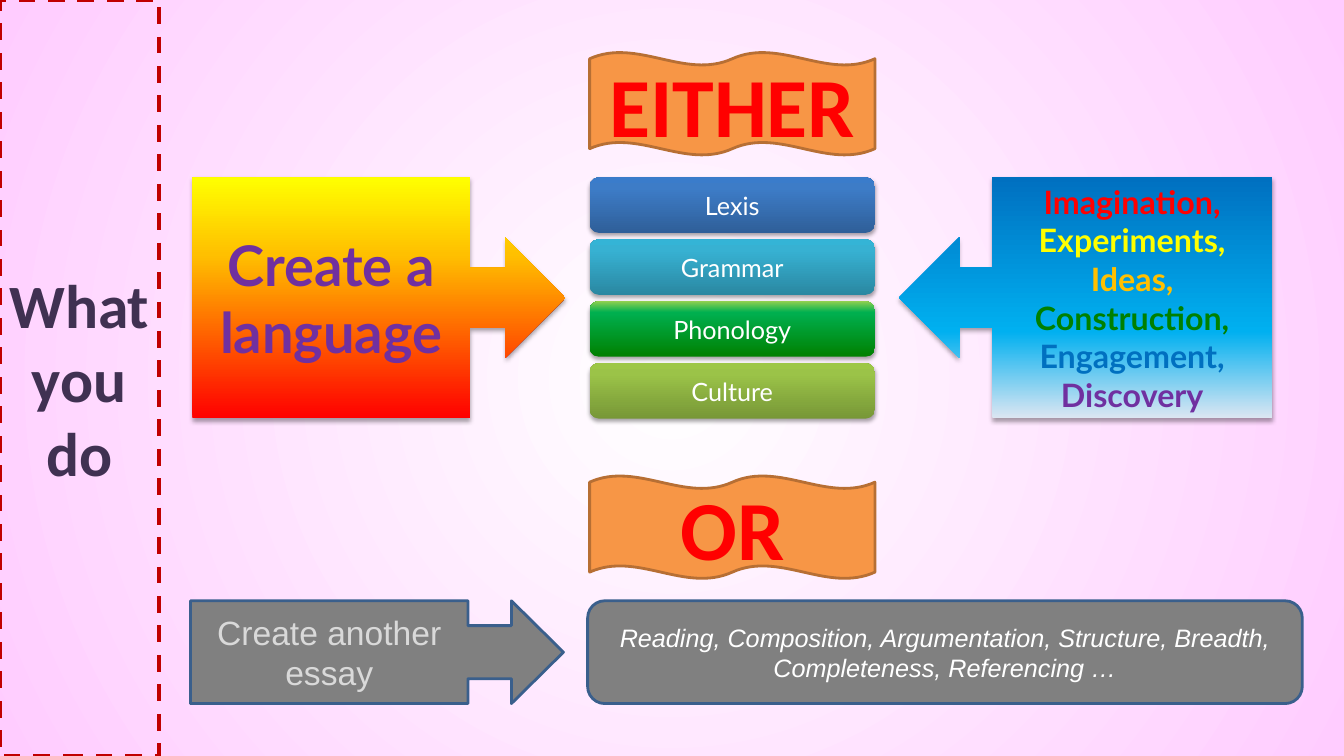
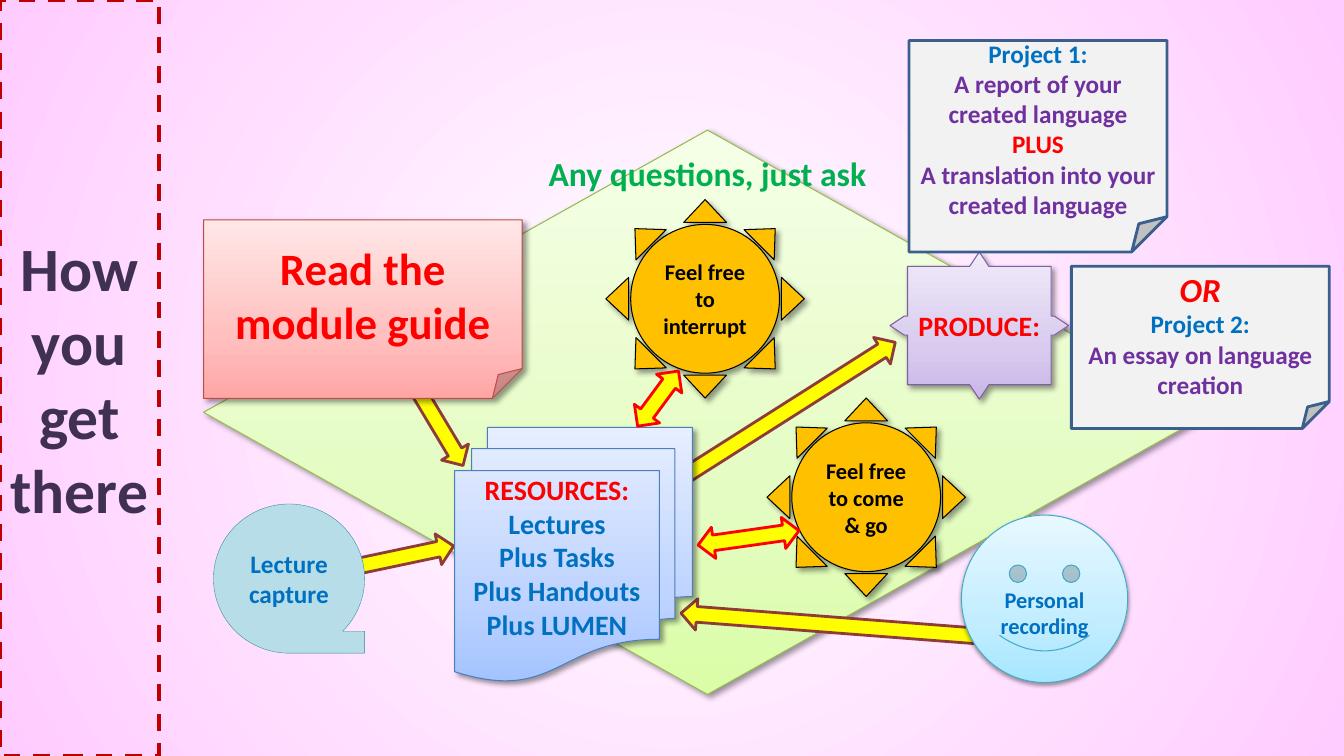
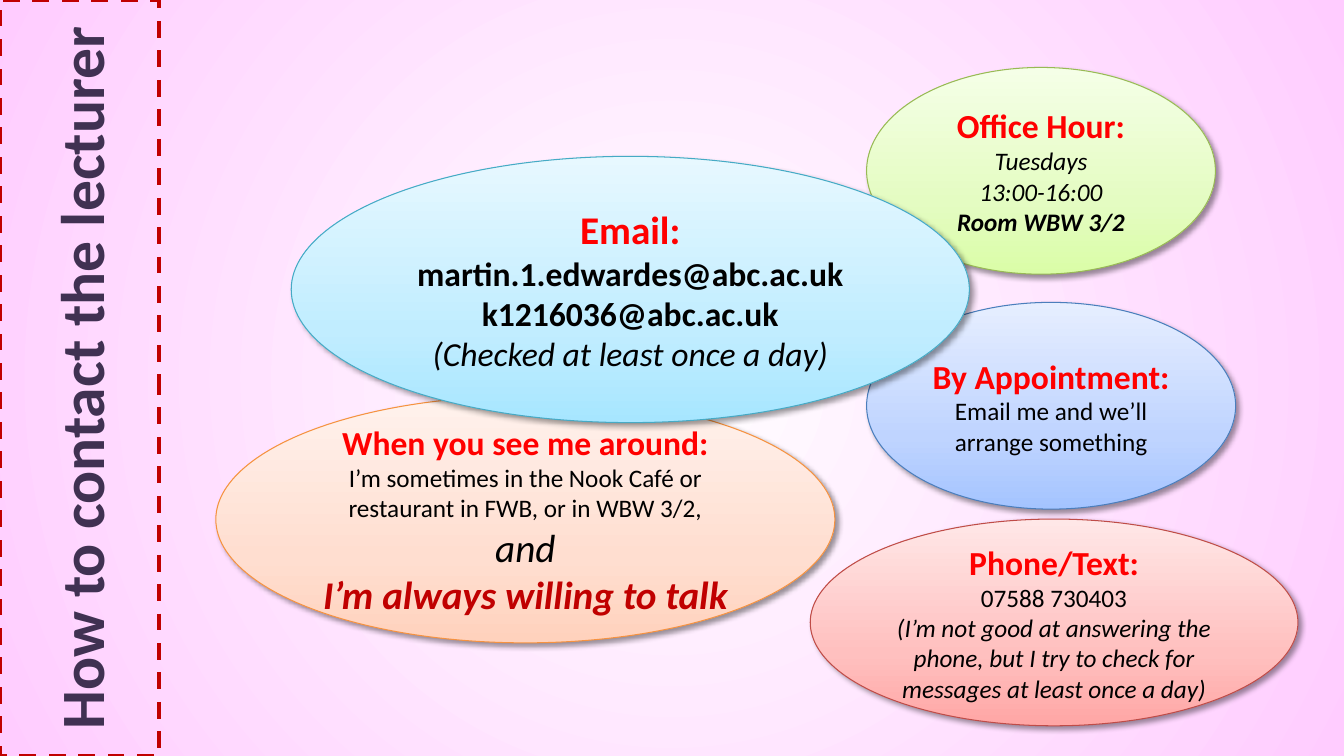
from dataclasses import dataclass

from lxml import etree
from pptx import Presentation
from pptx.dml.color import RGBColor
from pptx.enum.dml import MSO_LINE
from pptx.enum.shapes import MSO_SHAPE
from pptx.enum.text import MSO_ANCHOR, MSO_AUTO_SIZE, PP_ALIGN
from pptx.oxml.ns import qn
from pptx.util import Cm, Pt

CENTER = PP_ALIGN.CENTER
TOP, MIDDLE = MSO_ANCHOR.TOP, MSO_ANCHOR.MIDDLE
NO_FIT = MSO_AUTO_SIZE.NONE
DASH = MSO_LINE.DASH
ROUNDED = MSO_SHAPE.ROUNDED_RECTANGLE
WAVE = MSO_SHAPE.DOUBLE_WAVE
RIGHT_CALLOUT = MSO_SHAPE.RIGHT_ARROW_CALLOUT
LEFT_CALLOUT = MSO_SHAPE.LEFT_ARROW_CALLOUT
QUAD_CALLOUT = MSO_SHAPE.QUAD_ARROW_CALLOUT
DIAMOND = MSO_SHAPE.FLOWCHART_DECISION
DOCUMENTS = MSO_SHAPE.FLOWCHART_MULTIDOCUMENT
TAPE = MSO_SHAPE.FLOWCHART_SEQUENTIAL_ACCESS_STORAGE
NOTE = MSO_SHAPE.FOLDED_CORNER
SUN = MSO_SHAPE.SUN
SMILEY = MSO_SHAPE.SMILEY_FACE
OVAL = MSO_SHAPE.OVAL
ARROW = MSO_SHAPE.RIGHT_ARROW
TWO_WAY = MSO_SHAPE.LEFT_RIGHT_ARROW
TITLE_ONLY = 5


def pastel(low, middle, high, line):
    """Fill and outline of a soft box, shaded from its foot to its top."""
    return {"fill": ((0, low), (35, middle), (100, high)), "line": (line, 0.75)}


@dataclass(frozen=True)
class Theme:
    width: float = 33.87
    height: float = 19.05
    band: float = 4
    body_font: str = "Calibri"
    label_font: str = "Lato"
    essay_font: str = "Arial"
    backdrop: tuple = ((0, "FFFFFF"), (100, "FFCCFF"))
    # type sizes
    title: float = 44
    banner: float = 60
    display: float = 40
    heading: float = 32
    strong: float = 28
    lead: float = 24
    traits: float = 23
    label: float = 20
    text: float = 18
    small: float = 16
    # colours
    ink: str = "403152"
    black: str = "000000"
    white: str = "FFFFFF"
    pale: str = "D9D9D9"
    red: str = "FF0000"
    crimson: str = "C00000"
    yellow: str = "FFFF00"
    gold: str = "FFC000"
    green: str = "00B050"
    leaf: str = "008000"
    blue: str = "0070C0"
    purple: str = "7030A0"
    gray: str = "808080"
    paper: str = "F2F2F2"
    orange: str = "F79646"
    sky: str = "B7DEE8"
    navy_line: str = "3A5F8C"
    brown_line: str = "8E3B39"
    wave_line: str = "B76F34"
    sky_line: str = "31859C"


T = Theme()
GREENS = pastel("DAFDA7", "E4FCC2", "F5FFE7", "98B955")
BLUES = pastel("A4C4FF", "BFD4FF", "E6EEFF", "4B7EBC")
REDS = pastel("FFA6A5", "FFC0BF", "FFE7E7", "BF4C48")
AQUAS = pastel("A7E6FF", "C1EDFF", "E7F8FF", "46AAC5")
ORANGES = pastel("FFD2BD", "FFDED0", "FFF2ED", "F69240")
PURPLES = pastel("C9B5E8", "D8CBEE", "F0EAF9", "7D60A0")
# opacity %, blur pt, distance pt, direction in degrees
SOFT = (35, 3.1, 1.8, 90)
CAST = (40, 4, 3, 45)
UNDER = (38, 3.1, 1.6, 90)


@dataclass(frozen=True)
class Span:
    text: str
    size: float
    color: str
    bold: bool = True
    italic: bool = False


def plain(text, size=T.text, color=T.black, italic=False):
    return Span(text, size, color, False, italic)


def set_font(font, span, name):
    font.name, font.size = name, Pt(span.size)
    font.bold, font.italic = span.bold, span.italic
    font.color.rgb = RGBColor.from_string(span.color)


def gradient(stops, radial=False):
    grad = etree.Element(qn("a:gradFill"), rotWithShape="1")
    stop_list = etree.SubElement(grad, qn("a:gsLst"))
    for position, color in stops:
        stop = etree.SubElement(stop_list, qn("a:gs"), pos=str(position * 1000))
        etree.SubElement(stop, qn("a:srgbClr"), val=color)
    if radial:
        circle = etree.SubElement(grad, qn("a:path"), {"path": "circle"})
        etree.SubElement(circle, qn("a:fillToRect"),
                         {side: "50000" for side in "ltrb"})
    else:
        etree.SubElement(grad, qn("a:lin"), ang=str(270 * 60000), scaled="0")
    return grad


def swap_solid(parent, grad):
    parent.replace(parent.find(qn("a:solidFill")), grad)


class Deck:
    def __init__(self):
        self.prs = Presentation()
        self.prs.slide_width, self.prs.slide_height = Cm(T.width), Cm(T.height)
        master = self.prs.slide_master
        master.background.fill.solid()
        swap_solid(next(master.element.iter(qn("p:bgPr"))),
                   gradient(T.backdrop, radial=True))
        self.slide = None

    def new_slide(self, title, turned=False):
        """Start a slide; a turned title reads upwards along the side band."""
        self.slide = self.prs.slides.add_slide(self.prs.slide_layouts[TITLE_ONLY])
        band = self.slide.shapes.title
        width, height = (T.height, T.band) if turned else (T.band, T.height)
        band.left, band.top = Cm((T.band - width) / 2), Cm((T.height - height) / 2)
        band.width, band.height = Cm(width), Cm(height)
        band.rotation = 270 if turned else 0
        self.outline(band, T.crimson, 3)
        band.line.dash_style = DASH
        self.put_text(band, [Span(title, T.title, T.ink)])
        frame = band.text_frame
        frame.auto_size = NO_FIT
        frame.margin_left = frame.margin_right = Cm(0.1)

    def outline(self, shape, color, points):
        shape.line.color.rgb = RGBColor.from_string(color)
        shape.line.width = Pt(points)

    def put_text(self, shape, paragraphs, font=T.body_font, anchor=MIDDLE):
        """Fill a shape; a paragraph is one Span or a tuple of Spans."""
        frame = shape.text_frame
        frame.word_wrap = True
        frame.vertical_anchor = anchor
        for index, content in enumerate(paragraphs):
            paragraph = frame.add_paragraph() if index else frame.paragraphs[0]
            paragraph.alignment = CENTER
            if isinstance(content, Span):
                paragraph.add_run().text = content.text
                set_font(paragraph.font, content, font)
                continue
            for span in content:
                run = paragraph.add_run()
                run.text = span.text
                set_font(run.font, span, font)

    def shadow(self, shape, opacity, blur, distance, angle):
        effects = shape.element.spPr.find(qn("a:effectLst"))
        outer = etree.SubElement(
            effects, qn("a:outerShdw"), blurRad=str(int(Pt(blur))),
            dist=str(int(Pt(distance))), dir=str(angle * 60000), rotWithShape="0")
        color = etree.SubElement(outer, qn("a:srgbClr"), val=T.black)
        etree.SubElement(color, qn("a:alpha"), val=str(opacity * 1000))

    def box(self, kind, place, paragraphs=(), fill=T.white, line=None, shadow=None,
            adjust=(), font=T.body_font, anchor=MIDDLE, top=0.13):
        shape = self.slide.shapes.add_shape(kind, *map(Cm, place))
        for index, value in enumerate(adjust):
            shape.adjustments[index] = value
        shape.fill.solid()
        if isinstance(fill, str):
            shape.fill.fore_color.rgb = RGBColor.from_string(fill)
        else:
            swap_solid(shape.element.spPr, gradient(fill))
        if line:
            self.outline(shape, *line)
        else:
            shape.line.fill.background()
        shape.shadow.inherit = False
        if shadow:
            self.shadow(shape, *shadow)
        if paragraphs:
            self.put_text(shape, paragraphs, font, anchor)
            shape.text_frame.margin_top = Cm(top)
        return shape

    def arrow(self, left, top, length, angle, kind=ARROW, line=T.brown_line):
        self.box(kind, (left, top, length, 0.79), fill=T.yellow,
                 line=(line, 2)).rotation = angle

    def caption(self, place, span):
        self.put_text(self.slide.shapes.add_textbox(*map(Cm, place)), [span])

    def sun(self, left, top, text):
        self.box(SUN, (left, top, 5, 5), [Span(text, T.small, T.black)], T.gold,
                 (T.black, 0.75), CAST, adjust=[0.125])


def what_you_do(deck):
    deck.new_slide("What you do")
    column, column_width, row = 14.86, 7.19, 4.47
    for word, top in (("EITHER", 1.32), ("OR", 11.99)):
        deck.box(WAVE, (column, top, column_width, 2.59),
                 [Span(word, T.banner, T.red)], T.orange, (T.wave_line, 2))

    deck.box(RIGHT_CALLOUT, (4.85, row, 9.4, 6.07),
             [Span("Create a language", T.display, T.purple)],
             ((0, T.red), (68, T.gold), (100, T.yellow)), shadow=SOFT,
             adjust=(0.25, 0.25, 0.25, 0.744), font=T.label_font)

    parts = (
        ("Lexis", ("2F5F99", "3D7CC7", "3A7CCB")),
        ("Grammar", ("2A88A2", "37B1D2", "34B4D6")),
        ("Phonology", (T.leaf, T.green, "92D050")),
        ("Culture", ("779737", "9BC348", "9DC746")),
    )
    for index, (part, shades) in enumerate(parts):
        deck.box(ROUNDED, (column, row + index * 1.56, column_width, 1.4),
                 [plain(part, color=T.white)], tuple(zip((0, 80, 100), shades)),
                 shadow=SOFT, font=T.label_font)

    traits = (("Imagination,", T.red), ("Experiments,", T.yellow),
              ("Ideas,", T.gold), ("Construction,", T.leaf),
              ("Engagement,", T.blue), ("Discovery", T.purple))
    deck.box(LEFT_CALLOUT, (22.66, row, 9.4, 6.07),
             [Span(trait, T.traits, color) for trait, color in traits],
             ((0, "DCE6F2"), (36, "00B0F0"), (100, T.blue)), shadow=SOFT,
             adjust=(0.25, 0.25, 0.25, 0.75), font=T.label_font)

    essay = {"fill": T.gray, "line": (T.navy_line, 2), "font": T.essay_font}
    deck.box(RIGHT_CALLOUT, (4.8, 15.14, 9.4, 2.59),
             [plain("Create another essay", T.lead, T.pale)],
             adjust=(0.516, 0.5, 0.506, 0.744), **essay)
    deck.box(ROUNDED, (14.81, 15.14, 18.01, 2.59),
             [plain("Reading, Composition, Argumentation, Structure, Breadth, "
                    "Completeness, Referencing …", color=T.white, italic=True)],
             **essay)


def how_you_get_there(deck):
    deck.new_slide("How you get there")
    deck.box(DIAMOND, (5.13, 3.28, 25.4, 14.22), shadow=CAST, **GREENS)
    deck.caption((12.83, 3.76, 10, 1.2),
                 Span("Any questions, just ask", T.lead, T.green))

    for left, top, length, angle in ((9.07, 13.61, 2.39, 348.1),
                                     (16.54, 9.98, 6.53, 327.6),
                                     (9.86, 10.31, 2.39, 59.1),
                                     (17.15, 15.34, 7.42, 184.4)):
        deck.arrow(left, top, length, angle)

    deck.sun(15.27, 5.03, "Feel free to interrupt")
    resources = ("Lectures", "Plus Tasks", "Plus Handouts", "Plus LUMEN")
    deck.box(DOCUMENTS, (11.46, 10.77, 5.99, 6.4),
             [Span("RESOURCES:", T.label, T.red)]
             + [Span(item, T.label, T.blue) for item in resources],
             shadow=CAST, anchor=TOP, top=0.05, **BLUES)
    deck.sun(19.33, 10.03, "Feel free to come & go")
    deck.box(NOTE, (5.13, 5.54, 8.03, 4.5),
             [Span(line, T.heading, T.red) for line in ("Read the", "module guide")],
             shadow=CAST, **REDS)
    deck.box(QUAD_CALLOUT, (22.43, 6.35, 4.5, 3.71),
             [Span("PRODUCE:", T.label, T.red)], shadow=CAST,
             adjust=(0.129, 0.065, 0.098, 0.804), **PURPLES)
    deck.box(SMILEY, (24.23, 12.98, 4.19, 4.22),
             [Span("Personal recording", T.small, T.blue)],
             shadow=UNDER, top=0.82, **AQUAS)
    deck.box(TAPE, (5.38, 12.7, 3.81, 3.76),
             [Span("Lecture capture", T.text, T.blue)], T.sky, (T.sky_line, 0.25))

    deck.arrow(15.72, 9.65, 1.73, 306.5, TWO_WAY, T.red)
    deck.arrow(17.58, 13.16, 2.57, 351.9, TWO_WAY, T.red)

    project = {"fill": T.paper, "line": (T.navy_line, 2)}
    deck.box(NOTE, (22.91, 1.02, 6.5, 5.33), [
        Span("Project 1:", T.text, T.blue),
        Span("A report of your created language", T.text, T.purple),
        Span("PLUS", T.text, T.red),
        Span("A translation into your created language", T.text, T.purple),
    ], **project)
    deck.box(NOTE, (27, 6.71, 6.5, 4.09), [
        Span("OR", T.lead, T.red, italic=True),
        Span("Project 2:", T.text, T.blue),
        Span("An essay on language creation", T.text, T.purple),
    ], **project)


def how_to_contact(deck):
    deck.new_slide("How to contact the lecturer", turned=True)
    contacts = (
        ((20.42, 13.08, 12.29, 5.21), REDS, [
            Span("Phone/Text:", T.lead, T.red),
            plain("07588 730403"),
            plain("(I’m not good at answering the phone, but I try to check "
                  "for messages at least once a day)", italic=True)]),
        ((21.84, 7.62, 9.3, 5.21), BLUES, [
            Span("By Appointment:", T.lead, T.red),
            plain("Email me and we’ll arrange something")]),
        ((21.84, 1.7, 8.79, 5.21), GREENS, [
            Span("Office Hour:", T.lead, T.red),
            plain("Tuesdays", italic=True),
            plain("13:00-16:00", italic=True),
            Span("Room WBW 3/2", T.text, T.black, italic=True)]),
        ((5.44, 9.98, 15.6, 6.22), ORANGES, [
            Span("When you see me around:", T.lead, T.red),
            (plain("I’m sometimes in the Nook Café or restaurant in FWB, "
                   "or in WBW 3/2, "),
             plain("and", T.strong, italic=True)),
            Span("I’m always willing to talk", T.strong, T.crimson, italic=True)]),
        ((7.34, 3.94, 17.09, 6.71), AQUAS, [
            Span("Email:", T.strong, T.red),
            Span("martin.1.edwardes@abc.ac.uk", T.lead, T.black),
            Span("k1216036@abc.ac.uk", T.lead, T.black),
            plain("(Checked at least once a day)", T.lead, italic=True)]),
    )
    for place, look, paragraphs in contacts:
        deck.box(OVAL, place, paragraphs, shadow=CAST, **look)


def main():
    deck = Deck()
    what_you_do(deck)
    how_you_get_there(deck)
    how_to_contact(deck)
    deck.prs.save("out.pptx")


if __name__ == "__main__":
    main()
